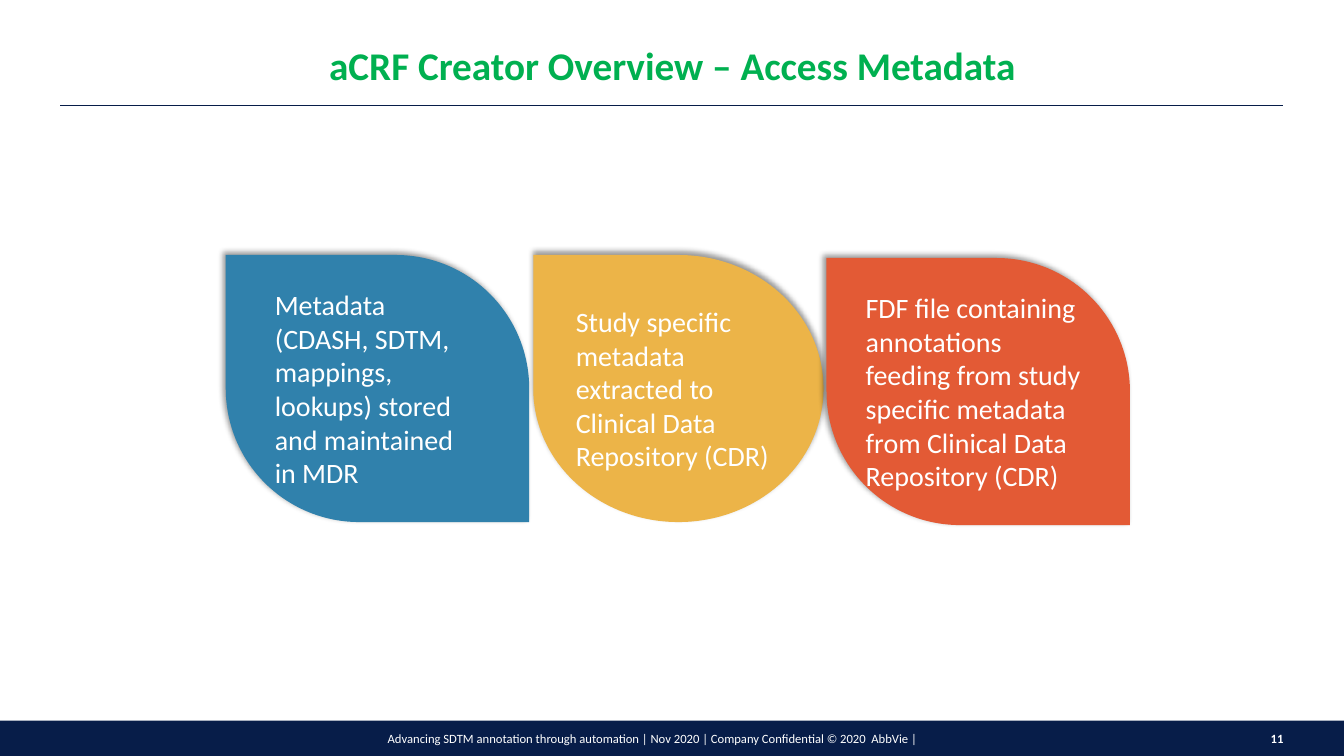
from lxml import etree
from pptx import Presentation
from pptx.dml.color import RGBColor
from pptx.enum.shapes import MSO_CONNECTOR, MSO_SHAPE
from pptx.enum.text import MSO_ANCHOR, PP_ALIGN
from pptx.oxml.ns import qn
from pptx.util import Inches, Pt

RECT, TEAR, LEAF = (MSO_SHAPE.RECTANGLE, MSO_SHAPE.TEAR,
                    MSO_SHAPE.ROUND_2_DIAG_RECTANGLE)
STRAIGHT = MSO_CONNECTOR.STRAIGHT
TOP, MIDDLE, BOTTOM = MSO_ANCHOR.TOP, MSO_ANCHOR.MIDDLE, MSO_ANCHOR.BOTTOM
LEFT, CENTER, RIGHT = PP_ALIGN.LEFT, PP_ALIGN.CENTER, PP_ALIGN.RIGHT
NAVY, GREEN, WHITE = "071D49", "00B050", "FFFFFF"


def rgb(code):
    return RGBColor.from_string(code)


class Deck:
    """Style and current slide; lengths are percent of the slide's size."""
    face = "Calibri"

    def __init__(self, width, height):
        self.prs = Presentation()
        self.prs.slide_width = Inches(width)
        self.prs.slide_height = Inches(height)
        self.slide = self.prs.slides.add_slide(self.prs.slide_layouts[6])
        self.shapes = self.slide.shapes

    def place(self, *box):
        sides = (self.prs.slide_width, self.prs.slide_height) * 2
        return [round(side * part / 100) for side, part in zip(sides, box)]

    def label(self, shape, text, size, color=WHITE, bold=False, align=LEFT,
              anchor=MIDDLE, pads=(0.1, 0.1), space=1.0):
        frame = shape.text_frame
        style = {"word_wrap": True, "vertical_anchor": anchor,
                 "margin_left": Inches(pads[0]),
                 "margin_right": Inches(pads[1]),
                 "margin_top": Inches(0.05), "margin_bottom": Inches(0.05)}
        for name, value in style.items():
            setattr(frame, name, value)
        para = frame.paragraphs[0]
        para.alignment, para.line_spacing = align, space
        run = para.add_run()
        run.text = text
        font = {"name": self.face, "size": Pt(size), "bold": bold}
        for name, value in font.items():
            setattr(run.font, name, value)
        run.font.color.rgb = rgb(color)

    def text(self, box, text, size, **style):
        self.label(self.shapes.add_textbox(*self.place(*box)),
                   text, size, **style)

    def block(self, kind, box, fill):
        shape = self.shapes.add_shape(kind, *self.place(*box))
        shape.shadow.inherit = False
        shape.fill.solid()
        shape.fill.fore_color.rgb = rgb(fill)
        shape.line.fill.background()
        return shape

    def rule(self, start, end, color, width):
        line = self.shapes.add_connector(
            STRAIGHT, *self.place(*start), *self.place(*end))
        line.line.color.rgb = rgb(color)
        line.line.width = Pt(width)
        etree.SubElement(line._element.spPr, qn("a:effectLst"))

    def card(self, kind, box, fill, text, angle, pads):
        shape = self.block(kind, box, fill)
        if kind == LEAF:
            shape.adjustments[0], shape.adjustments[1] = 0.5, 0
        props = shape._element.spPr
        props.find(qn("a:xfrm")).set("flipH", "1")
        # Soft outer shadow
        shade = etree.SubElement(
            props.find(qn("a:effectLst")), qn("a:outerShdw"),
            blurRad=str(Pt(4)), dist=str(Pt(3)), dir=str(angle * 60000),
            rotWithShape="0")
        tone = etree.SubElement(shade, qn("a:srgbClr"), val="000000")
        etree.SubElement(tone, qn("a:alpha"), val="40000")
        self.label(shape, text, 20, pads=pads)


def main():
    deck = Deck(13.333, 7.5)

    # Footer band and title rule
    deck.block(RECT, (0, 95.33, 100, 4.67), NAVY)
    deck.rule((4.5, 14), (95.5, 14), NAVY, 0.75)

    # Title, page number and footer
    deck.text((15.9, 1.73, 68.25, 10.67),
              "aCRF Creator Overview – Access Metadata", 28, color=GREEN,
              bold=True, align=CENTER, anchor=BOTTOM, space=0.9)
    deck.text((92.8, 96.4, 2.7, 2.67), "11", 9, bold=True, align=RIGHT,
              pads=(0.1, 0))
    deck.text((26.03, 96, 45, 2.67),
              "Advancing SDTM annotation through automation | Nov 2020 | "
              "Company Confidential © 2020  AbbVie |", 9,
              align=CENTER, anchor=TOP)

    # Three steps, the middle one at the back
    cards = [
        (TEAR, 39.68, 33.73, 21.6, "ECB448", 270, (0, 0),
         "Study specific metadata extracted to Clinical Data "
         "Repository (CDR)"),
        (LEAF, 16.8, 33.73, 22.58, "3081AC", 225, (0.1, 0.1),
         "Metadata (CDASH, SDTM, mappings, lookups) stored and "
         "maintained in MDR"),
        (LEAF, 61.5, 34.13, 22.58, "E35A35", 225, (0, 0),
         "FDF file containing annotations feeding from study specific "
         "metadata from Clinical Data Repository (CDR)"),
    ]
    for kind, left, top, width, fill, angle, pads, text in cards:
        deck.card(kind, (left, top, width, 35.33), fill, text, angle, pads)

    deck.prs.save("out.pptx")


if __name__ == "__main__":
    main()
